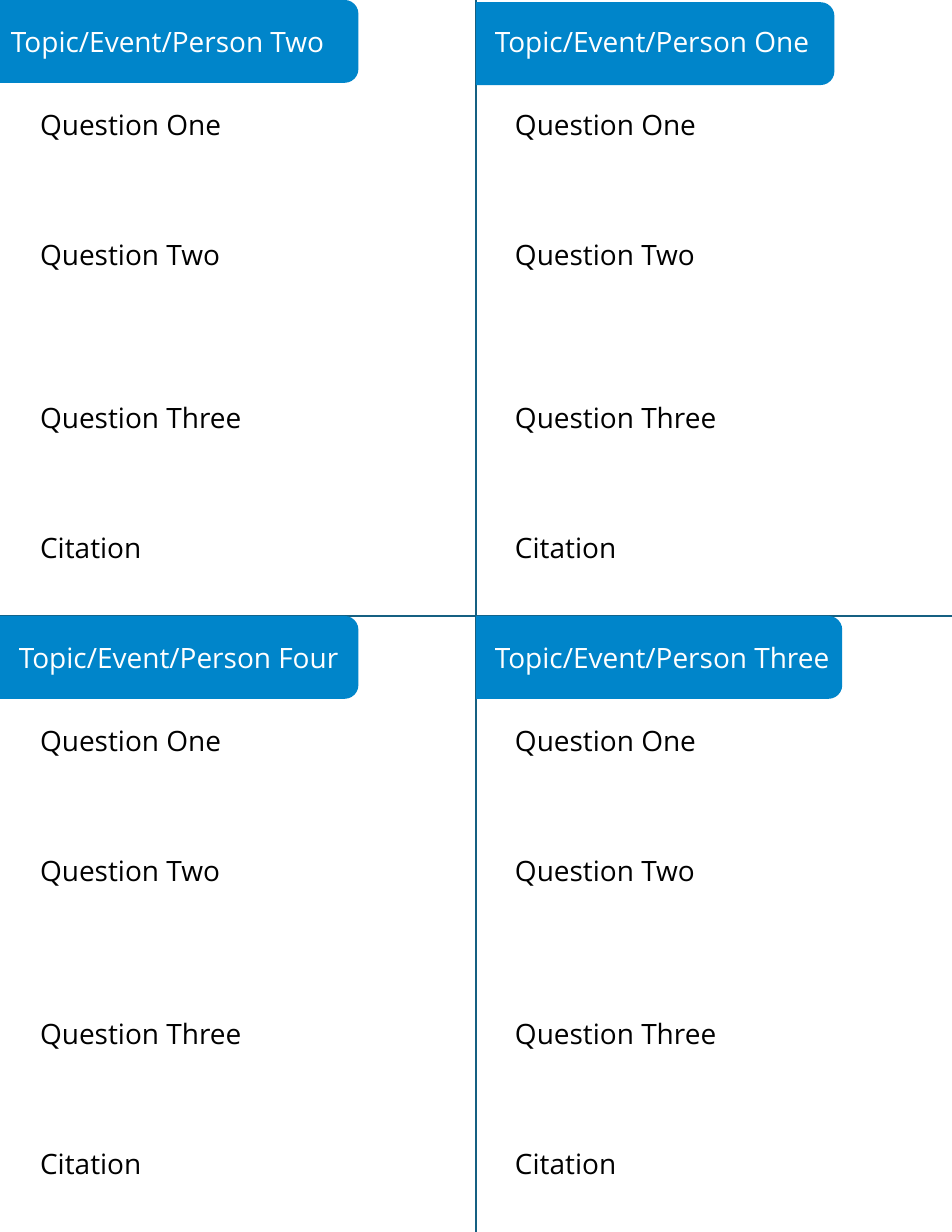
from pptx import Presentation
from pptx.dml.color import RGBColor
from pptx.enum.shapes import MSO_CONNECTOR as Link, MSO_SHAPE as Form
from pptx.enum.text import MSO_AUTO_SIZE as Fit
from pptx.util import Inches, Pt
from lxml.etree import SubElement

W, H = 8.5, 11
COL, ROW = W / 2, H / 2
BLUE, TEAL, WHITE, BLACK = "0085CA", "156082", "FFFFFF", "000000"


def color(code):
    return RGBColor.from_string(code)


def write(lines, left, top, wide, high, ink=BLACK, size=18, font="Open Sans"):
    """Add a text box; lines holds pairs of text and space before in points."""
    box = slide.shapes.add_textbox(*map(Inches, (left, top, wide, high)))
    frame = box.text_frame
    frame.word_wrap = True
    frame.auto_size = Fit.SHAPE_TO_FIT_TEXT
    for i, (text, gap) in enumerate(lines):
        para = frame.add_paragraph() if i else frame.paragraphs[0]
        para.space_before = Pt(gap)
        run = para.add_run()
        run.text = text
        run.font.size, run.font.name = Pt(size), font
        run.font.color.rgb = color(ink)


deck = Presentation()
deck.slide_width, deck.slide_height = Inches(W), Inches(H)
slide = deck.slides.add_slide(deck.slide_layouts[6])

# Lines that split the page into four cards
for ends in ((COL, 0, COL, H), (0, ROW, W, ROW)):
    line = slide.shapes.add_connector(Link.STRAIGHT, *map(Inches, ends))
    line.line.color.rgb = color(TEAL)
    line.line.width = Pt(1.5)
    props = line._element.spPr
    SubElement(props, props.tag.replace("}spPr", "}effectLst").replace(
        "presentationml", "drawingml"))

# Cards: column, row, name, tab width, tab drop, text inset
cards = [
    (0, 0, "Two", 3.2, 0, 0),
    (1, 0, "One", 3.2, 0.02, 0.07),
    (0, 1, "Four", 3.2, 0, 0.07),
    (1, 1, "Three", 3.27, 0, 0.07),
]
prompts = [("Question One", 0), ("Question Two", 62),
           ("Question Three", 83), ("Citation", 62)]
TAB = 0.74

for col, row, name, wide, drop, inset in cards:
    x, y = col * COL, row * ROW
    # Tab, a tall shape turned so that its round end points right
    turn = (wide - TAB) / 2
    tab = slide.shapes.add_shape(
        Form.ROUND_2_SAME_RECTANGLE, Inches(x + turn), Inches(y + drop - turn),
        Inches(TAB), Inches(wide))
    tab.rotation = 90
    tab.shadow.inherit = False
    tab.fill.solid()
    tab.fill.fore_color.rgb = color(BLUE)
    tab.line.fill.background()
    # Heading and prompts
    write([(f"Topic/Event/Person {name}", 0)], x + inset, y + 0.17, 3.2, 0.4,
          ink=WHITE)
    write(prompts, x + (0.25 if col else 0.26), y + 0.91, 3.74, 4.34)

deck.save("out.pptx")
